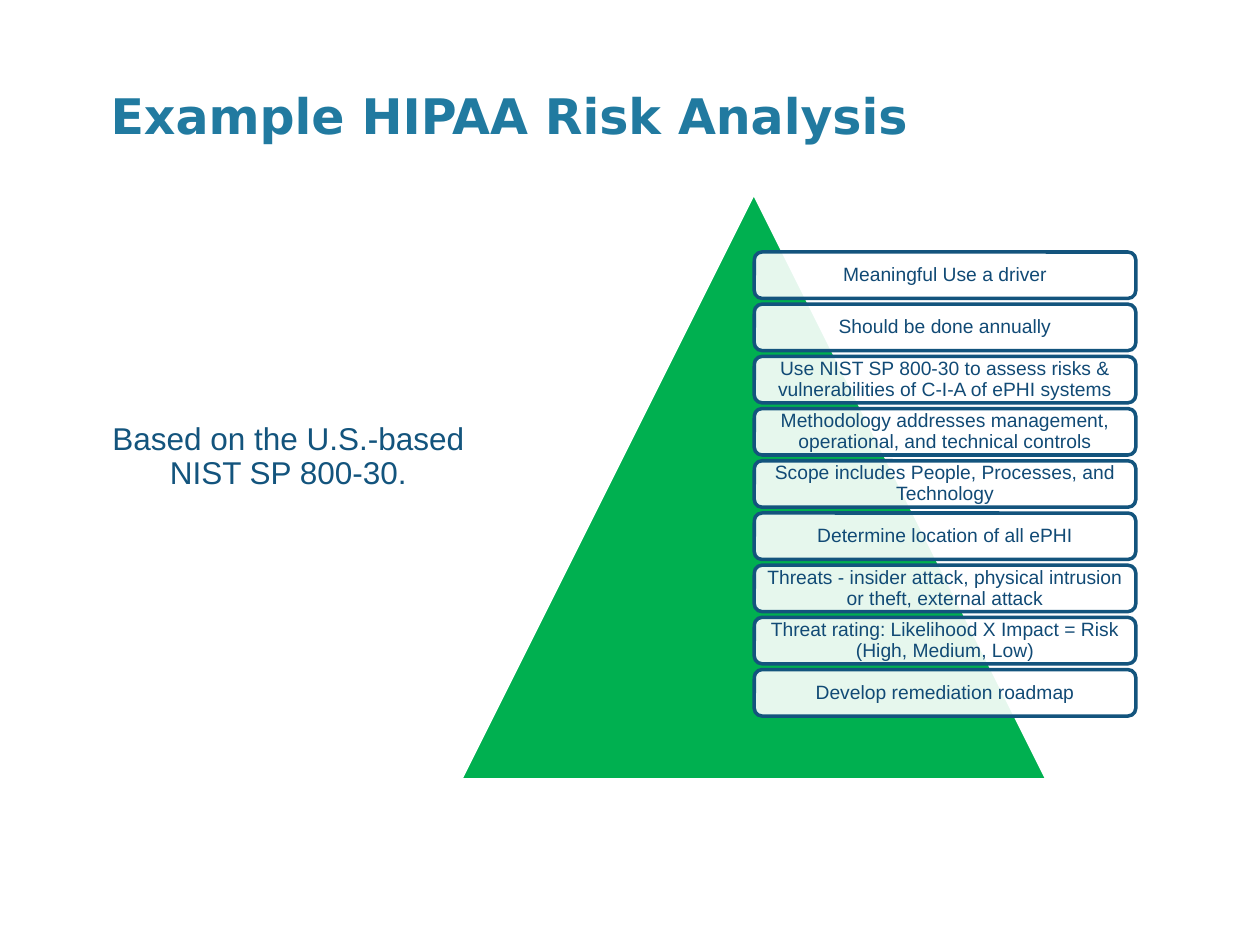
from dataclasses import dataclass

from lxml.etree import SubElement
from pptx import Presentation
from pptx.dml.color import RGBColor as RGB
from pptx.enum.shapes import MSO_SHAPE as SHAPE
from pptx.enum.text import MSO_ANCHOR as ANCHOR, PP_ALIGN as ALIGN
from pptx.oxml.ns import qn
from pptx.util import Pt


@dataclass(frozen=True)
class Theme:
    title: RGB = RGB(0x21, 0x7A, 0xA0)
    accent: RGB = RGB(0x13, 0x54, 0x7D)
    step_text: RGB = RGB(0x11, 0x4A, 0x75)
    pyramid: RGB = RGB(0x00, 0xB0, 0x50)
    white: RGB = RGB(0xFF, 0xFF, 0xFF)
    title_font: str = "DejaVu Sans"
    body_font: str = "Arial"
    title_size: int = 28
    body_size: int = 18
    step_size: int = 11
    line_width: int = 2


class SlideBuilder:
    def __init__(self, slide, theme):
        self.s = slide
        self.theme = theme

    def set_text(self, tf, text, font, size, color, *, bold=False, align=ALIGN.CENTER,
                 anchor=ANCHOR.MIDDLE, inset=(0, 0), spacing=0.9):
        tf.word_wrap = True
        tf.vertical_anchor = anchor
        tf.margin_left = tf.margin_right = Pt(inset[0])
        tf.margin_top = tf.margin_bottom = Pt(inset[1])
        p = tf.paragraphs[0]
        p.text = text
        p.alignment = align
        p.line_spacing = spacing
        p.font.name = font
        p.font.size = Pt(size)
        p.font.bold = bold
        p.font.color.rgb = color

    def title(self, text, *box):
        t = self.theme
        sp = self.s.shapes.title
        sp.left, sp.top, sp.width, sp.height = map(Pt, box)
        self.set_text(sp.text_frame, text, t.title_font, t.title_size, t.title, bold=True,
                      align=ALIGN.LEFT, anchor=ANCHOR.TOP, inset=(7.2, 3.6), spacing=1.0)

    def text(self, text, *box):
        t = self.theme
        sp = self.s.shapes.add_textbox(*map(Pt, box))
        self.set_text(sp.text_frame, text, t.body_font, t.body_size, t.accent)

    def shape(self, kind, fill, line, *box):
        sp = self.s.shapes.add_shape(kind, *map(Pt, box))
        sp.shadow.inherit = False
        sp.fill.solid()
        sp.fill.fore_color.rgb = fill
        sp.line.color.rgb = line
        sp.line.width = Pt(self.theme.line_width)
        return sp

    def step(self, text, *box):
        t = self.theme
        sp = self.shape(SHAPE.ROUNDED_RECTANGLE, t.white, t.accent, *box)
        # Let the pyramid show faintly through the fill
        color = sp.element.spPr.find(qn("a:solidFill"))[0]
        SubElement(color, qn("a:alpha"), val="90000")
        self.set_text(sp.text_frame, text, t.body_font, t.step_size, t.step_text,
                      inset=(3.6, 3.6))


STEPS = [
    "Meaningful Use a driver",
    "Should be done annually",
    "Use NIST SP 800-30 to assess risks & vulnerabilities of C-I-A of ePHI systems",
    "Methodology addresses management, operational, and technical controls",
    "Scope includes People, Processes, and Technology",
    "Determine location of all ePHI",
    "Threats - insider attack, physical intrusion or theft, external attack",
    "Threat rating: Likelihood X Impact = Risk (High, Medium, Low)",
    "Develop remediation roadmap",
]
STEP_LEFT, STEP_TOP, STEP_WIDTH, STEP_HEIGHT = 431, 144, 218, 26.5
STEP_PITCH = 29.83


def main():
    prs = Presentation()
    prs.slide_width, prs.slide_height = Pt(720), Pt(540)
    theme = Theme()
    b = SlideBuilder(prs.slides.add_slide(prs.slide_layouts[5]), theme)

    # Title
    b.title("Example HIPAA Risk Analysis", 56, 45.5, 628, 63)

    # Pyramid with the steps stacked down its right side
    b.shape(SHAPE.ISOSCELES_TRIANGLE, theme.pyramid, theme.white, 263, 110.2, 335.5, 335.5)
    for i, text in enumerate(STEPS):
        b.step(text, STEP_LEFT, STEP_TOP + i * STEP_PITCH, STEP_WIDTH, STEP_HEIGHT)

    # Statement on the left
    b.text("Based on the U.S.-based NIST SP 800-30.", 56, 226, 217.5, 70.5)

    prs.save("out.pptx")


if __name__ == "__main__":
    main()
